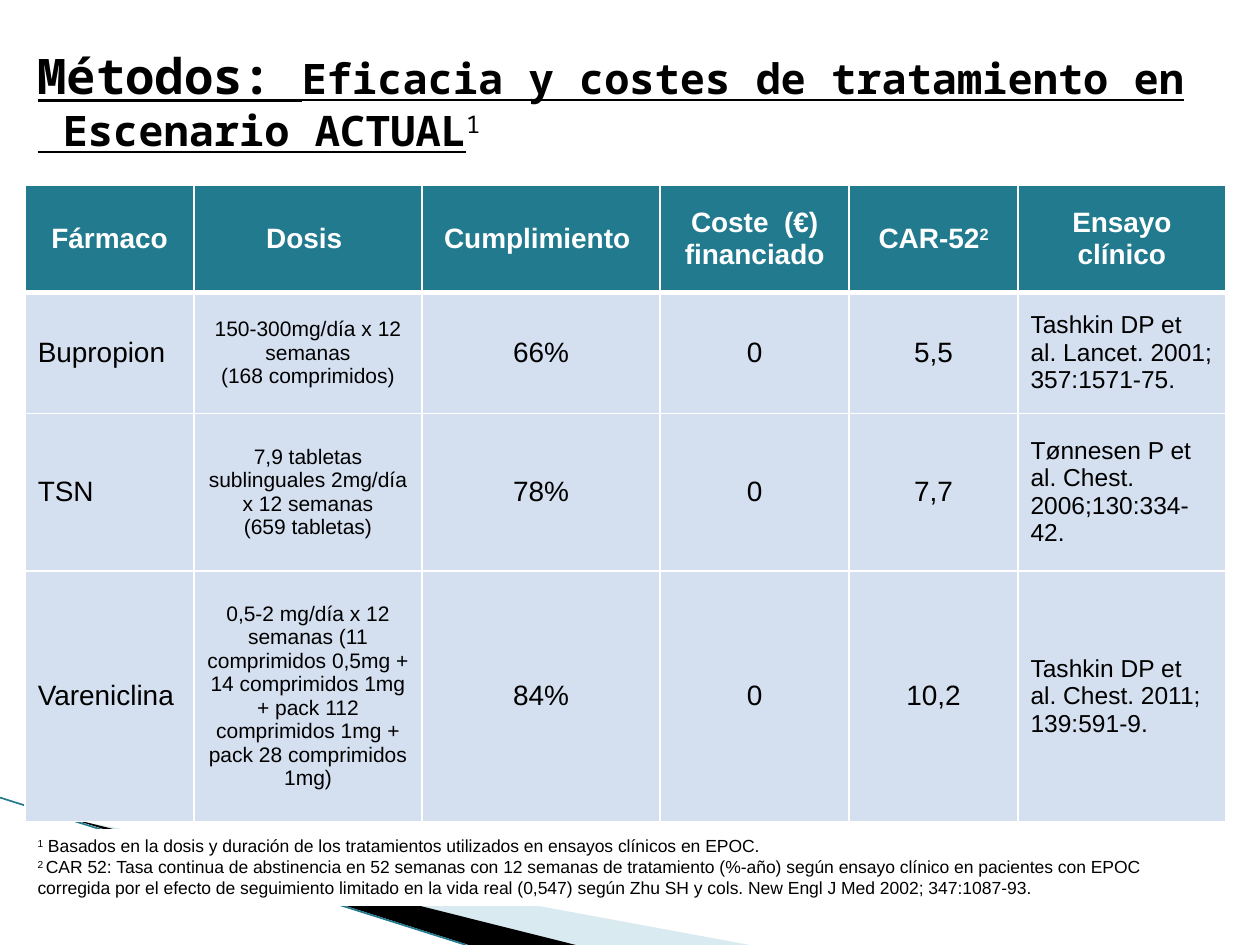
from lxml.etree import SubElement
from pptx import Presentation
from pptx.dml.color import RGBColor
from pptx.enum.shapes import MSO_CONNECTOR, MSO_SHAPE
from pptx.enum.text import MSO_ANCHOR, PP_ALIGN
from pptx.oxml import parse_xml
from pptx.oxml.ns import nsdecls, qn
from pptx.util import Inches, Pt

WIDE, HIGH = Inches(10), Inches(7.5)
LEFT, SPAN = 2, 95.3
NBSP = chr(160)
HUES = {"white": "FFFFFF", "black": "000000", "teal": "227A8F",
        "pale": "D4DFEF", "sky": "A0CBDC"}
SANS, MONO = "Arial", "Noto Sans Mono"
COLS = [1.34, 1.81, 1.89, 1.5, 1.34, 1.65]
ROWS = [0.85, 0.96, 1.25, 1.99]
SIZES = [16, 12, 16, 16, 16, 14]
HEADS = [["Fármaco"], ["Dosis "], ["Cumplimiento "], ["Coste  (€) financiado"],
         ["CAR-52", "2"], ["Ensayo clínico"]]
DRUGS = [
    ["Bupropion", "150-300mg/día x 12 semanas\n(168 comprimidos)", "66%", "0", "5,5",
     "Tashkin DP et al. Lancet. 2001; 357:1571-75."],
    ["TSN", "7,9 tabletas sublinguales 2mg/día x 12 semanas\n(659 tabletas)", "78%", "0",
     "7,7", "Tønnesen P et al. Chest. 2006;130:334-42."],
    ["Vareniclina", "0,5-2 mg/día x 12 semanas (11 comprimidos 0,5mg + 14 comprimidos 1mg "
     "+ pack 112 comprimidos 1mg + pack 28 comprimidos 1mg)", "84%", "0", "10,2",
     "Tashkin DP et al. Chest. 2011; 139:591-9."],
]
NOTES = [
    ("1", " Basados en la dosis y duración de los tratamientos utilizados en ensayos "
     "clínicos en EPOC."),
    ("2 ", "CAR 52: Tasa continua de abstinencia en 52 semanas con 12 semanas de "
     "tratamiento (%-año) según ensayo clínico en pacientes con EPOC corregida por el "
     "efecto de seguimiento limitado en la vida real (0,547) según Zhu SH y cols. "
     "New Engl J Med 2002; 347:1087-93."),
]


def hue(name):
    return RGBColor.from_string(HUES[name])


def spot(x, y):
    """Turn percentages of the slide's width and height into lengths."""
    return int(WIDE * x / 100), int(HIGH * y / 100)


def paint(item, name):
    item.fill.solid()
    item.fill.fore_color.rgb = hue(name)


def add_run(para, text, size, face=SANS, tint="black", bold=False, line=False, sup=False):
    run = para.add_run()
    run.text = text
    font = run.font
    font.size, font.name, font.bold, font.underline = Pt(size), face, bold, line
    font.color.rgb = hue(tint)
    if sup:
        font._element.set("baseline", "30000")


def add_wedge(slide, points, name, alpha=None):
    start, *rest = [spot(*point) for point in points]
    pen = slide.shapes.build_freeform(*start)
    pen.add_line_segments(rest)
    wedge = pen.convert_to_shape()
    wedge.shadow.inherit = False
    wedge.line.fill.background()
    paint(wedge, name)
    if alpha:
        tone = wedge.fill._xPr.find(".//" + qn("a:srgbClr"))
        SubElement(tone, qn("a:alpha"), val=str(alpha * 1000))


def add_line(slide, start, end):
    line = slide.shapes.add_connector(MSO_CONNECTOR.STRAIGHT, *spot(*start), *spot(*end))
    line.line.color.rgb = hue("teal")
    line.line.width = Pt(0.95)
    SubElement(line._element.spPr, qn("a:effectLst"))


def edge(cell, base):
    """Draw white cell borders, with the bottom one base points wide."""
    props = cell._tc.get_or_add_tcPr()
    for place, (side, width) in enumerate(zip("LRTB", (1, 1, 1, base))):
        props.insert(place, parse_xml(
            f'<a:ln{side} {nsdecls("a")} w="{Pt(width)}"><a:solidFill>'
            f'<a:srgbClr val="{HUES["white"]}"/></a:solidFill></a:ln{side}>'))


def dress(cell, fill, base=1):
    cell.vertical_anchor = MSO_ANCHOR.MIDDLE
    paint(cell, fill)
    edge(cell, base)


def space(para, gap):
    para.space_before = para.space_after = Pt(gap)


def fill_head(cell, parts):
    dress(cell, "teal", 3)
    para = cell.text_frame.paragraphs[0]
    para.alignment = PP_ALIGN.CENTER
    space(para, 6)
    for rank, part in enumerate(parts):
        add_run(para, part, 16, tint="white", bold=True, sup=rank > 0)


def fill_cell(cell, text, col):
    dress(cell, "pale")
    if col in (2, 3):
        cell.margin_left = cell.margin_right = cell.margin_top = cell.margin_bottom = 0
    frame = cell.text_frame
    for rank, part in enumerate(text.split("\n")):
        para = frame.add_paragraph() if rank else frame.paragraphs[0]
        para.alignment = PP_ALIGN.LEFT if col in (0, 5) else PP_ALIGN.CENTER
        add_run(para, part, SIZES[col])


def add_grid(slide):
    table = slide.shapes.add_table(len(ROWS), len(COLS), *spot(LEFT, 19.6),
                                   *spot(SPAN, 67.2)).table
    table.horz_banding = False
    for col, width in zip(table.columns, COLS):
        col.width = Inches(width)
    for row, height in zip(table.rows, ROWS):
        row.height = Inches(height)
    for col, parts in enumerate(HEADS):
        fill_head(table.cell(0, col), parts)
    for row, drug in enumerate(DRUGS, 1):
        for col, text in enumerate(drug):
            fill_cell(table.cell(row, col), text, col)
    space(table.cell(1, 5).text_frame.paragraphs[0], 3)


def add_title(slide):
    frame = slide.shapes.add_textbox(*spot(LEFT, 4.8), *spot(SPAN, 11.6)).text_frame
    frame.word_wrap = True
    frame.vertical_anchor = MSO_ANCHOR.MIDDLE
    para = frame.paragraphs[0]
    add_run(para, "Métodos: ", 28, MONO, bold=True, line=True)
    add_run(para, f"Eficacia y costes de tratamiento en {NBSP}Escenario ACTUAL", 24, MONO,
            bold=True, line=True)
    add_run(para, "1", 24, MONO, sup=True)


def add_notes(slide):
    box = slide.shapes.add_shape(MSO_SHAPE.RECTANGLE, *spot(LEFT, 87.73), *spot(SPAN, 8.13))
    box.shadow.inherit = False
    box.line.fill.background()
    paint(box, "white")
    frame = box.text_frame
    frame.word_wrap = True
    frame.vertical_anchor = MSO_ANCHOR.TOP
    for rank, (mark, text) in enumerate(NOTES):
        para = frame.add_paragraph() if rank else frame.paragraphs[0]
        para.alignment = PP_ALIGN.LEFT
        add_run(para, mark, 10, sup=True)
        add_run(para, text, 10)


def main():
    deck = Presentation()
    deck.slide_width, deck.slide_height = WIDE, HIGH
    slide = deck.slides.add_slide(deck.slide_layouts[6])
    add_wedge(slide, [(5.5, 86.7), (59.5, 100), (45.6, 100)], "sky", 40)
    add_wedge(slide, [(5.3, 86.5), (45.7, 100), (37.2, 100)], "black")
    add_line(slide, (0, 84.4), (37, 100))
    add_grid(slide)
    add_title(slide)
    add_notes(slide)
    deck.save("out.pptx")


if __name__ == "__main__":
    main()
